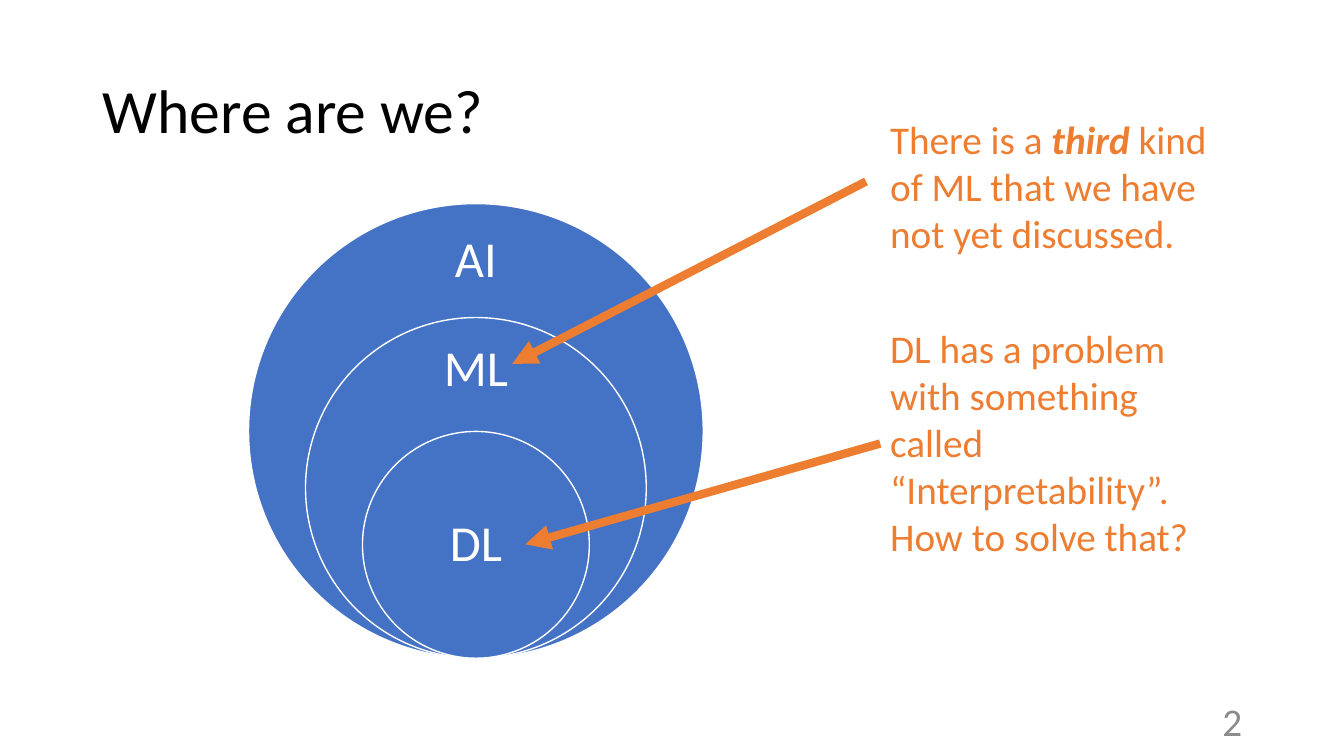
from dataclasses import dataclass

from lxml import etree
from pptx import Presentation
from pptx.dml.color import RGBColor
from pptx.enum.shapes import MSO_CONNECTOR, MSO_SHAPE
from pptx.enum.text import MSO_ANCHOR, PP_ALIGN
from pptx.oxml.ns import qn
from pptx.util import Inches, Pt

STRAIGHT = MSO_CONNECTOR.STRAIGHT
OVAL = MSO_SHAPE.OVAL
TOP, MIDDLE = MSO_ANCHOR.TOP, MSO_ANCHOR.MIDDLE
LEFT, CENTER, RIGHT = PP_ALIGN.LEFT, PP_ALIGN.CENTER, PP_ALIGN.RIGHT
LEFT_SIDE = 1


@dataclass(frozen=True)
class Theme:
    font: str = "Calibri"
    black: RGBColor = RGBColor(0x00, 0x00, 0x00)
    white: RGBColor = RGBColor(0xFF, 0xFF, 0xFF)
    gray: RGBColor = RGBColor(0x8C, 0x8C, 0x8C)
    blue: RGBColor = RGBColor(0x44, 0x72, 0xC4)
    orange: RGBColor = RGBColor(0xED, 0x7D, 0x31)
    title_size: Pt = Pt(44)
    label_size: Pt = Pt(36)
    body_size: Pt = Pt(28)


theme = Theme()


def add_text(box, runs, size, color, align=LEFT, anchor=TOP, spacing=1.0):
    textbox = slide.shapes.add_textbox(*[Inches(v) for v in box])
    frame = textbox.text_frame
    frame.word_wrap = True
    frame.vertical_anchor = anchor
    paragraph = frame.paragraphs[0]
    paragraph.alignment = align
    paragraph.line_spacing = spacing
    paragraph.font.name = theme.font
    paragraph.font.size = size
    paragraph.font.color.rgb = color
    for words, emphasized in runs:
        run = paragraph.add_run()
        run.text = words
        if emphasized:
            run.font.bold = run.font.italic = True
    return textbox


def add_arrow(start, end):
    arrow = slide.shapes.add_connector(STRAIGHT, *[Inches(v) for v in start + end])
    arrow.line.color.rgb = theme.orange
    arrow.line.width = Pt(6)
    etree.SubElement(arrow.line._get_or_add_ln(), qn("a:tailEnd"), type="triangle")
    etree.SubElement(arrow._element.spPr, qn("a:effectLst"))
    return arrow


prs = Presentation()
prs.slide_width, prs.slide_height = Inches(13.33), Inches(7.5)
slide = prs.slides.add_slide(prs.slide_layouts[6])

add_text((0.92, 0.4, 11.5, 1.45), [("Where are we?", False)],
         theme.title_size, theme.black, anchor=MIDDLE, spacing=0.9)
add_text((9.42, 6.95, 3, 0.4), [("2", False)],
         theme.body_size, theme.gray, align=RIGHT, anchor=MIDDLE)

center_x, circles_bottom = 4.72, 6.53
for field, diameter, label_top, label_height in [
    ("AI", 4.51, 2.25, 0.68),
    ("ML", 3.38, 3.36, 0.63),
    ("DL", 2.25, 4.84, 1.13),
]:
    circle = slide.shapes.add_shape(
        OVAL, Inches(center_x - diameter / 2), Inches(circles_bottom - diameter),
        Inches(diameter), Inches(diameter))
    circle.shadow.inherit = False
    circle.fill.solid()
    circle.fill.fore_color.rgb = theme.blue
    circle.line.color.rgb = theme.white
    circle.line.width = Pt(1)
    add_text((center_x - 0.79, label_top, 1.58, label_height), [(field, False)],
             theme.label_size, theme.white, align=CENTER, anchor=MIDDLE, spacing=0.9)

add_arrow((8.59, 1.8), (5.08, 3.61))
add_text((8.73, 1.09, 3.52, 1.51),
         [("There is a ", False), ("third ", True),
          ("kind of ML that we have not yet discussed.", False)],
         theme.body_size, theme.orange)
dl_question = add_text(
    (8.73, 3.17, 3.52, 2.46),
    [("DL has a problem with something called “Interpretability”. How to solve that?", False)],
    theme.body_size, theme.orange)
dl_arrow = add_arrow((8.73, 4.4), (5.21, 5.4))
dl_arrow.begin_connect(dl_question, LEFT_SIDE)

prs.save("out.pptx")
